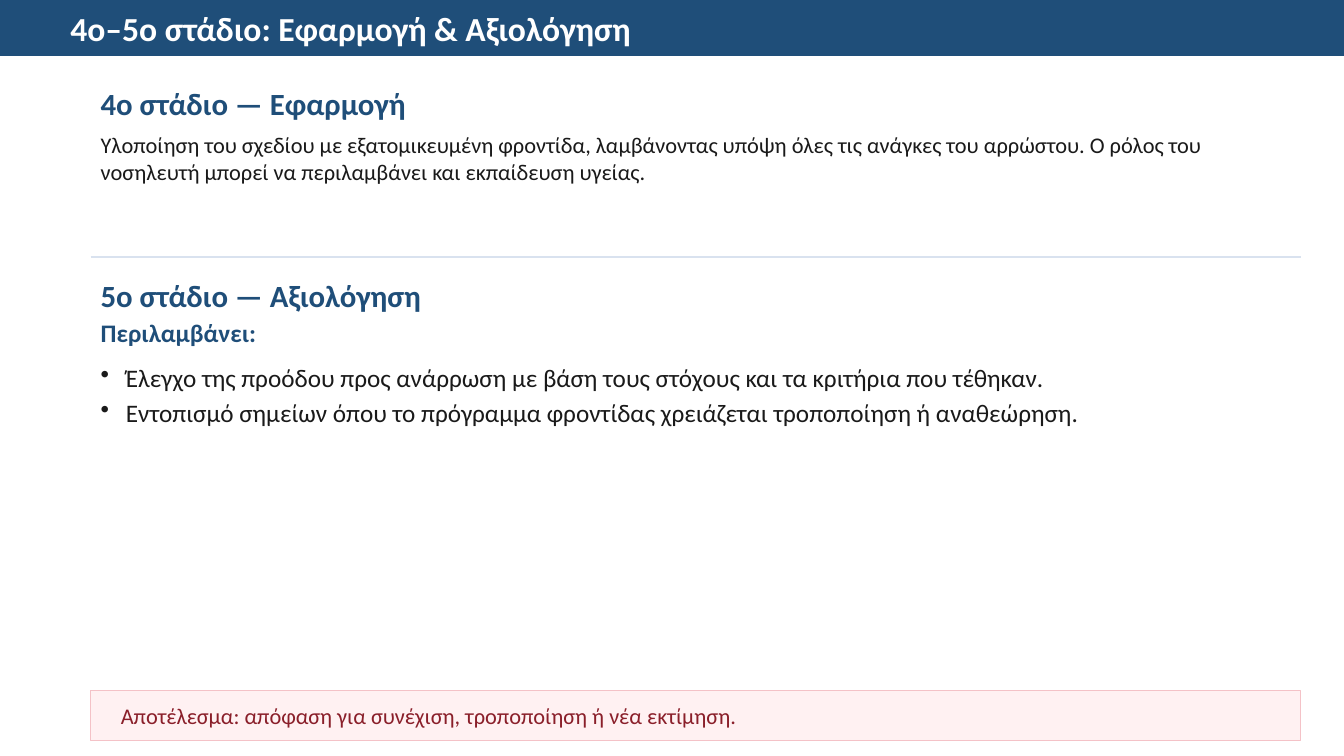
from pptx import Presentation
from pptx.dml.color import RGBColor
from pptx.enum.shapes import MSO_CONNECTOR, MSO_SHAPE
from pptx.enum.text import MSO_ANCHOR
from pptx.oxml.ns import qn
from pptx.util import Inches, Pt
from lxml.etree import SubElement

# Content
TITLE = "4ο–5ο στάδιο: Εφαρμογή & Αξιολόγηση"
APPLY = "4ο στάδιο — Εφαρμογή"
CARE = ("Υλοποίηση του σχεδίου με εξατομικευμένη φροντίδα, λαμβάνοντας υπόψη "
        "όλες τις ανάγκες του αρρώστου. Ο ρόλος του νοσηλευτή μπορεί να "
        "περιλαμβάνει και εκπαίδευση υγείας.")
REVIEW = "5ο στάδιο — Αξιολόγηση"
LEAD = "Περιλαμβάνει:"
CHECKS = [
    "Έλεγχο της προόδου προς ανάρρωση με βάση τους στόχους και τα κριτήρια που τέθηκαν.",
    "Εντοπισμό σημείων όπου το πρόγραμμα φροντίδας χρειάζεται τροποποίηση ή αναθεώρηση.",
]
RESULT = "Αποτέλεσμα: απόφαση για συνέχιση, τροποποίηση ή νέα εκτίμηση."

THEME = {
    "font": "Calibri",
    "navy": "1F4E79", "white": "FFFFFF", "ink": "1A1A1A", "rule": "D9E2EF",
    "rose": "FFF1F2", "edge": "F4C2C7", "wine": "8A1F2A",
    "title": 24, "head": 22, "list": 18, "body": 16,
}
WIDE, HIGH = 13.33, 7.5
LEFT, SPAN = 0.9, 12


def color(key):
    return RGBColor.from_string(THEME[key])


def add_box(slide, x, y, w, h, fill, edge):
    box = slide.shapes.add_shape(MSO_SHAPE.RECTANGLE, Inches(x), Inches(y), Inches(w), Inches(h))
    box.shadow.inherit = False
    box.fill.solid()
    box.fill.fore_color.rgb = color(fill)
    box.line.color.rgb = color(edge)
    box.line.width = Pt(1)


def add_bullet(para):
    props = para._p.get_or_add_pPr()
    props.set("marL", str(Inches(0.25)))
    props.set("indent", str(-Inches(0.25)))
    SubElement(props, qn("a:buChar"), char="•")


def add_text(slide, lines, x, y, w, h, size, ink, bold=False, mid=True, bullet=False):
    frame = slide.shapes.add_textbox(Inches(x), Inches(y), Inches(w), Inches(h)).text_frame
    frame.word_wrap = True
    frame.vertical_anchor = MSO_ANCHOR.MIDDLE if mid else MSO_ANCHOR.TOP
    frame.text = "\n".join(lines)
    for para in frame.paragraphs:
        if bullet:
            add_bullet(para)
            para.line_spacing = 1.15
        font = para.font
        font.name, font.size, font.bold = THEME["font"], Pt(THEME[size]), bold
        font.color.rgb = color(ink)


def add_rule(slide, y):
    rule = slide.shapes.add_connector(
        MSO_CONNECTOR.STRAIGHT, Inches(LEFT), Inches(y), Inches(LEFT + SPAN), Inches(y))
    rule.line.color.rgb = color("rule")
    rule.line.width = Pt(1)
    SubElement(rule._element.spPr, qn("a:effectLst"))


def main():
    deck = Presentation()
    deck.slide_width, deck.slide_height = Inches(WIDE), Inches(HIGH)
    slide = deck.slides.add_slide(deck.slide_layouts[6])

    # Title band
    add_box(slide, 0, 0, WIDE, 0.55, "navy", "navy")
    add_text(slide, [TITLE], 0.6, 0.08, WIDE - 1.2, 0.4, "title", "white", bold=True)

    # Stage four
    add_text(slide, [APPLY], LEFT, 0.85, SPAN, 0.35, "head", "navy", bold=True)
    add_text(slide, [CARE], LEFT, 1.25, SPAN, 1.1, "body", "ink", mid=False)
    add_rule(slide, 2.55)

    # Stage five
    add_text(slide, [REVIEW], LEFT, 2.75, SPAN, 0.35, "head", "navy", bold=True)
    add_text(slide, [LEAD], LEFT, 3.15, SPAN, 0.3, "list", "navy", bold=True)
    add_text(slide, CHECKS, LEFT, 3.5, SPAN, 3.2, "list", "ink", mid=False, bullet=True)

    # Result strip
    add_box(slide, LEFT, 6.85, SPAN, 0.5, "rose", "edge")
    add_text(slide, [RESULT], LEFT + 0.2, 6.95, SPAN - 0.4, 0.3, "body", "wine")

    deck.save("out.pptx")


if __name__ == "__main__":
    main()
